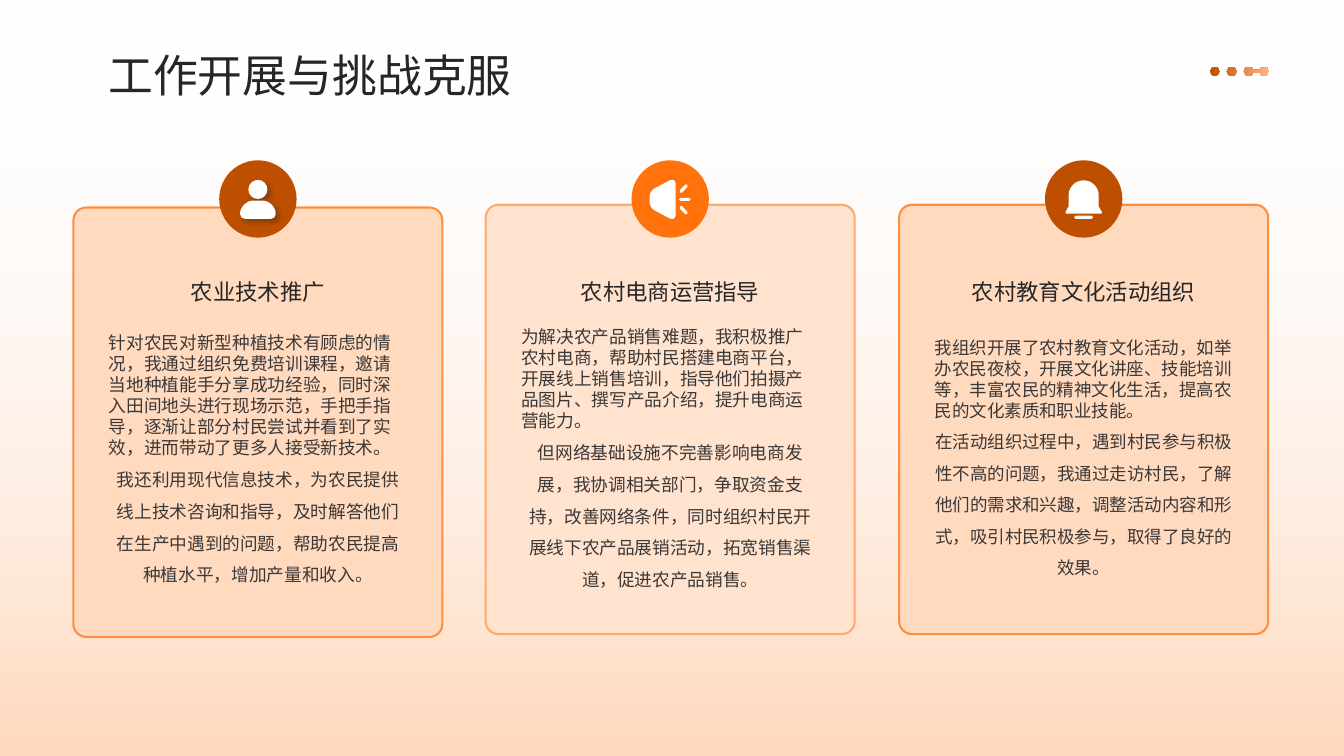
from dataclasses import dataclass

from lxml import etree
from pptx import Presentation
from pptx.dml.color import RGBColor
from pptx.enum.shapes import MSO_SHAPE
from pptx.enum.text import MSO_ANCHOR, MSO_AUTO_SIZE, PP_ALIGN
from pptx.oxml.ns import qn
from pptx.util import Cm, Pt

RECTANGLE = MSO_SHAPE.RECTANGLE
ROUNDED = MSO_SHAPE.ROUNDED_RECTANGLE
BADGE = MSO_SHAPE.FLOWCHART_CONNECTOR
LEFT, CENTER = PP_ALIGN.LEFT, PP_ALIGN.CENTER
MIDDLE, TOP = MSO_ANCHOR.MIDDLE, MSO_ANCHOR.TOP
NO_AUTOFIT = MSO_AUTO_SIZE.NONE

Outline = list[tuple[float, float, float]]  # corner x, corner y, corner radius


@dataclass(frozen=True)
class Theme:
    font: str = "Noto Sans CJK SC"
    white: str = "FFFFFF"
    ink: str = "262626"
    body_ink: str = "3B3838"
    rust: str = "BF4F00"
    orange: str = "FF720C"
    edge: str = "FF8F40"
    light_edge: str = "FFAA6D"
    peach: str = "FFDABF"
    light_peach: str = "FFE3CE"
    dot_end: str = "FFB47F"
    title_size: float = 32
    heading_size: float = 16
    tight_line: float = 1.2
    open_line: float = 1.8


THEME = Theme()


@dataclass(frozen=True)
class Card:
    left: float
    heading: str
    opening: str
    follow_up: str
    icon: list[Outline]
    shadow: str
    badge: str = THEME.rust
    fill: str = THEME.peach
    edge: str = THEME.edge
    top: float = 5.16
    body_top: float = 8.23
    body_height: float = 7.42
    body_size: float = 12.6


# Outlines, in cm around the centre of their badge
def box(left: float, top: float, right: float, bottom: float, radius: float) -> Outline:
    return [(left, top, radius), (right, top, radius),
            (right, bottom, radius), (left, bottom, radius)]


def disc(x: float, y: float, radius: float) -> Outline:
    return box(x - radius, y - radius, x + radius, y + radius, radius)


UPPER_WAVE = [(0.22, -0.2, 0.04), (0.41, -0.39, 0.04), (0.46, -0.33, 0.04), (0.27, -0.13, 0.04)]
PERSON = [disc(0, -0.24, 0.24),
          [(-0.45, 0.04, 0.34), (0.45, 0.04, 0.34), (0.45, 0.5, 0.12), (-0.45, 0.5, 0.12)]]
MEGAPHONE = [[(-0.52, -0.2, 0.14), (0.14, -0.55, 0.18), (0.14, 0.57, 0.18), (-0.52, 0.22, 0.14)],
             box(0.22, -0.03, 0.52, 0.05, 0.04), UPPER_WAVE,
             [(x, 0.02 - y, radius) for x, y, radius in UPPER_WAVE]]
BELL = [[(-0.38, -0.47, 0.38), (0.38, -0.47, 0.38), (0.38, 0.19, 0),
         (0.48, 0.37, 0.05), (-0.48, 0.37, 0.05), (-0.38, 0.19, 0)],
        box(-0.24, 0.42, 0.24, 0.5, 0.04)]
DOTS = [disc(x, 0, 0.12) for x in (0, 0.43, 0.86, 1.25)] + [box(0.97, -0.04, 1.14, 0.04, 0)]

CARDS = [
    Card(1.85, "农业技术推广",
         "针对农民对新型种植技术有顾虑的情况，我通过组织免费培训课程，邀请当地种植能手分享成功经验，同时深入田间地头进行现场示范，手把手指导，逐渐让部分村民尝试并看到了实效，进而带动了更多人接受新技术。",
         "我还利用现代信息技术，为农民提供线上技术咨询和指导，及时解答他们在生产中遇到的问题，帮助农民提高种植水平，增加产量和收入。",
         PERSON, shadow=THEME.ink, top=5.23),
    Card(12.24, "农村电商运营指导",
         "为解决农产品销售难题，我积极推广农村电商，帮助村民搭建电商平台，开展线上销售培训，指导他们拍摄产品图片、撰写产品介绍，提升电商运营能力。",
         "但网络基础设施不完善影响电商发展，我协调相关部门，争取资金支持，改善网络条件，同时组织村民开展线下农产品展销活动，拓宽销售渠道，促进农产品销售。",
         MEGAPHONE, shadow=THEME.orange, badge=THEME.orange, fill=THEME.light_peach,
         edge=THEME.light_edge, body_top=8.08),
    Card(22.66, "农村教育文化活动组织",
         "我组织开展了农村教育文化活动，如举办农民夜校，开展文化讲座、技能培训等，丰富农民的精神文化生活，提高农民的文化素质和职业技能。",
         "在活动组织过程中，遇到村民参与积极性不高的问题，我通过走访村民，了解他们的需求和兴趣，调整活动内容和形式，吸引村民积极参与，取得了良好的效果。",
         BELL, shadow=THEME.rust, body_top=8.36, body_height=7.14, body_size=12.5),
]
CARD_WIDTH, CARD_HEIGHT = 9.3, 10.82
TEXT_WIDTH = 8.01
BADGE_TOP, BADGE_SIZE = 4.04, 1.95


def write(paragraph, text: str, *, size: float, color: str = THEME.ink, align=LEFT, spacing=1.1) -> None:
    paragraph.alignment = align
    paragraph.line_spacing = spacing
    paragraph._p.get_or_add_pPr().set("hangingPunct", "0")
    run = paragraph.add_run()
    run.text = text
    run.font.size = Pt(size)
    run.font.color.rgb = RGBColor.from_string(color)
    run.font.name = THEME.font
    etree.SubElement(run.font._element, qn("a:ea"), typeface=THEME.font)


def add_frame(shapes, left: float, top: float, width: float, height: float):
    frame = shapes.add_textbox(Cm(left), Cm(top), Cm(width), Cm(height)).text_frame
    frame.word_wrap = True
    frame.vertical_anchor = TOP
    return frame


def paint(shape, fill: str, edge: str | None = None) -> None:
    shape.shadow.inherit = False
    shape.fill.solid()
    shape.fill.fore_color.rgb = RGBColor.from_string(fill)
    if edge:
        shape.line.color.rgb = RGBColor.from_string(edge)
        shape.line.width = Pt(1.5)
    else:
        shape.line.fill.background()


def paint_gradient(shape, start: str, end: str, angle: float) -> None:
    shape.shadow.inherit = False
    shape.line.fill.background()
    shape.fill.gradient()
    shape.fill.gradient_angle = angle
    for stop, color, position in zip(shape.fill.gradient_stops, (start, end), (0, 1)):
        stop.color.rgb = RGBColor.from_string(color)
        stop.position = position


def cast_shadow(shape, color: str) -> None:
    effects = shape._element.spPr.find(qn("a:effectLst"))
    shadow = etree.SubElement(effects, qn("a:outerShdw"), blurRad=str(Pt(4)), dist=str(Pt(3)),
                              dir="2700000", algn="tl", rotWithShape="0")
    tone = etree.SubElement(shadow, qn("a:srgbClr"), val=color)
    etree.SubElement(tone, qn("a:alpha"), val="40000")


def corner_points(outline: Outline) -> list[tuple[float, float]]:
    """One point for a sharp corner; start, two controls and end for a round one."""
    points = []
    for index, (x, y, radius) in enumerate(outline):
        arms = []
        for near_x, near_y, _ in (outline[index - 1], outline[(index + 1) % len(outline)]):
            length = ((near_x - x) ** 2 + (near_y - y) ** 2) ** 0.5
            arms.append(((near_x - x) / length * radius, (near_y - y) / length * radius))
        steps = ((0, 1), (0, 0.45), (1, 0.45), (1, 1)) if radius else ((0, 0),)
        points += [(1000 * (x + arms[arm][0] * reach), 1000 * (y + arms[arm][1] * reach))
                   for arm, reach in steps]
    return points


def bend_corners(shape, outlines: list[Outline]) -> None:
    """Fold the three segments of each round corner into one Bezier curve."""
    track = shape._element.find(".//" + qn("a:path"))
    nodes = iter([node for node in track if node.tag != qn("a:close")])
    for outline in outlines:
        previous_end = None
        for _, _, radius in outline:
            start = next(nodes)
            if previous_end == dict(start[0].attrib):
                track.remove(start)
            previous_end = dict(start[0].attrib)
            if radius:
                segments = [next(nodes) for _ in range(3)]
                curve = etree.Element(qn("a:cubicBezTo"))
                segments[0].addprevious(curve)
                for segment in segments:
                    curve.append(segment[0])
                    track.remove(segment)
                previous_end = dict(curve[2].attrib)


def add_outlines(shapes, outlines: list[Outline], x: float, y: float):
    traces = [corner_points(outline) for outline in outlines]
    builder = shapes.build_freeform(*traces[0][0], scale=Cm(1) / 1000)
    for index, trace in enumerate(traces):
        if index:
            builder.move_to(*trace[0])
        builder.add_line_segments(trace[1:], close=True)
    shape = builder.convert_to_shape(Cm(x), Cm(y))
    bend_corners(shape, outlines)
    return shape


def add_card(shapes, card: Card) -> None:
    center = card.left + CARD_WIDTH / 2
    panel = shapes.add_shape(ROUNDED, Cm(card.left), Cm(card.top), Cm(CARD_WIDTH), Cm(CARD_HEIGHT))
    panel.adjustments[0] = 0.035
    paint(panel, card.fill, card.edge)
    badge = shapes.add_shape(BADGE, Cm(center - BADGE_SIZE / 2), Cm(BADGE_TOP),
                             Cm(BADGE_SIZE), Cm(BADGE_SIZE))
    paint(badge, card.badge)
    icon = add_outlines(shapes, card.icon, center, BADGE_TOP + BADGE_SIZE / 2)
    paint(icon, THEME.white)
    cast_shadow(icon, card.shadow)

    text_left = center - TEXT_WIDTH / 2
    heading = add_frame(shapes, text_left, 6.81, TEXT_WIDTH, 1.02)
    write(heading.paragraphs[0], card.heading, size=THEME.heading_size, align=CENTER)
    body = add_frame(shapes, text_left, card.body_top, TEXT_WIDTH, card.body_height)
    write(body.paragraphs[0], card.opening, size=card.body_size, color=THEME.body_ink,
          spacing=Pt(card.body_size * THEME.tight_line))
    write(body.add_paragraph(), card.follow_up, size=card.body_size, color=THEME.body_ink,
          align=CENTER, spacing=Pt(card.body_size * THEME.open_line))


def main() -> None:
    deck = Presentation()
    deck.slide_width, deck.slide_height = Cm(33.87), Cm(19.05)
    slide = deck.slides.add_slide(deck.slide_layouts[5])
    shapes = slide.shapes

    # Backdrop, clear at the top
    backdrop = shapes.add_shape(RECTANGLE, 0, 0, deck.slide_width, deck.slide_height)
    paint_gradient(backdrop, THEME.white, THEME.peach, 270)
    etree.SubElement(backdrop._element.find(".//" + qn("a:gs"))[0], qn("a:alpha"), val="0")

    # Cards
    for card in CARDS:
        add_card(shapes, card)

    # Title, brought in front of the backdrop
    title = shapes.title
    shapes._spTree.append(title._element)
    title.left, title.top, title.width, title.height = Cm(2.73), Cm(1.17), Cm(27.33), Cm(1.3)
    frame = title.text_frame
    frame.margin_left = frame.margin_top = frame.margin_right = frame.margin_bottom = 0
    frame.vertical_anchor = MIDDLE
    frame.auto_size = NO_AUTOFIT
    write(frame.paragraphs[0], "工作开展与挑战克服", size=THEME.title_size)

    # Corner dots
    paint_gradient(add_outlines(shapes, DOTS, 30.61, 1.8), THEME.rust, THEME.dot_end, 0)
    deck.save("out.pptx")


if __name__ == "__main__":
    main()
